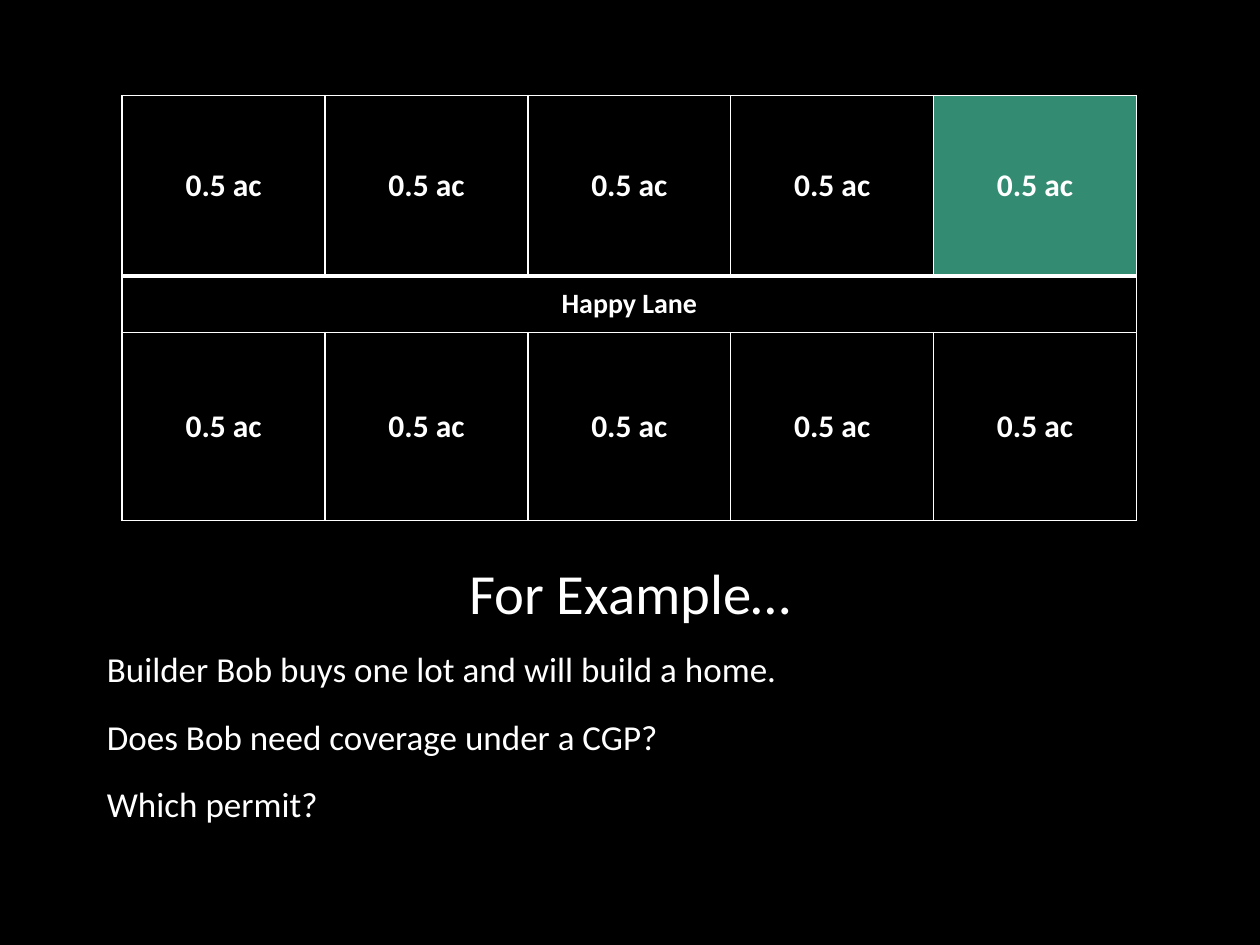
from dataclasses import dataclass

from lxml import etree
from pptx import Presentation
from pptx import util as u
from pptx.dml.color import RGBColor
from pptx.enum import text
from pptx.oxml import ns


@dataclass(frozen=True)
class Theme:
    font: str = "Calibri"
    background: str = "000000"
    ink: str = "FFFFFF"
    sold_lot: str = "338C72"
    title_size: float = 32.4
    body_size: float = 20
    lot_size: float = 18
    lane_size: float = 16
    thin: float = 1
    thick: float = 3


theme = Theme()


def add_run(paragraph, wording, size, bold=False):
    run = paragraph.add_run()
    run.text = wording
    run.font.name = theme.font
    run.font.size = u.Pt(size)
    run.font.bold = bold
    run.font.color.rgb = RGBColor.from_string(theme.ink)


def add_border(cell, side, width):
    properties = cell._tc.get_or_add_tcPr()
    line = etree.SubElement(properties, ns.qn(f"a:ln{side}"), w=str(u.Pt(width)))
    fill = etree.SubElement(line, ns.qn("a:solidFill"))
    etree.SubElement(fill, ns.qn("a:srgbClr"), val=theme.ink)


# Slide
presentation = Presentation()
presentation.slide_width = u.Inches(10)
presentation.slide_height = u.Inches(7.5)
slide = presentation.slides.add_slide(presentation.slide_layouts[6])
slide.background.fill.solid()
slide.background.fill.fore_color.rgb = RGBColor.from_string(theme.background)

# Lots on both sides of the lane
lots = ["0.5 ac"] * 5
rows = [lots, ["Happy Lane"] + [""] * 4, lots]
row_heights = [1.43, 0.45, 1.49]
lane_row = 1
sold_position = (0, 4)
table = slide.shapes.add_table(
    len(rows), len(lots), u.Inches(0.97), u.Inches(0.76), u.Inches(8.06), u.Inches(3.37)
).table
table.first_row = False
table.horz_banding = False
for column in table.columns:
    column.width = u.Inches(1.61)

for row_index, (labels, height) in enumerate(zip(rows, row_heights)):
    table.rows[row_index].height = u.Inches(height)
    label_size = theme.lane_size if row_index == lane_row else theme.lot_size
    for column_index, label in enumerate(labels):
        cell = table.cell(row_index, column_index)
        cell.vertical_anchor = text.MSO_ANCHOR.MIDDLE
        cell.margin_left = cell.margin_right = u.Inches(0.13)
        cell.margin_top = cell.margin_bottom = 0
        paragraph = cell.text_frame.paragraphs[0]
        paragraph.alignment = text.PP_ALIGN.CENTER
        if label:
            add_run(paragraph, label, label_size, bold=True)

        # The lane's upper edge is heavier than the other lines
        top = theme.thick if row_index == lane_row else theme.thin
        bottom = theme.thick if row_index == lane_row - 1 else theme.thin
        for side, width in zip("LRTB", (theme.thin, theme.thin, top, bottom)):
            add_border(cell, side, width)
        if (row_index, column_index) == sold_position:
            cell.fill.solid()
            cell.fill.fore_color.rgb = RGBColor.from_string(theme.sold_lot)
        else:
            cell.fill.background()
table.cell(lane_row, 0).merge(table.cell(lane_row, len(lots) - 1))

# Title
title = slide.shapes.add_textbox(u.Inches(0.75), u.Inches(4.39), u.Inches(8.5), u.Inches(0.63))
title.text_frame.word_wrap = True
title.text_frame.vertical_anchor = text.MSO_ANCHOR.BOTTOM
paragraph = title.text_frame.paragraphs[0]
paragraph.alignment = text.PP_ALIGN.CENTER
paragraph.line_spacing = 0.9
add_run(paragraph, "For Example…", theme.title_size)

# Questions
questions = [
    "Builder Bob buys one lot and will build a home.",
    "Does Bob need coverage under a CGP?",
    "Which permit?",
]
body = slide.shapes.add_textbox(u.Inches(0.75), u.Inches(5.02), u.Inches(8.5), u.Inches(1.58))
body.text_frame.word_wrap = True
for index, question in enumerate(questions):
    paragraph = body.text_frame.add_paragraph() if index else body.text_frame.paragraphs[0]
    paragraph.line_spacing = 1.2
    paragraph.space_before = u.Pt(10 if index else 0)
    add_run(paragraph, question, theme.body_size)

presentation.save("out.pptx")
